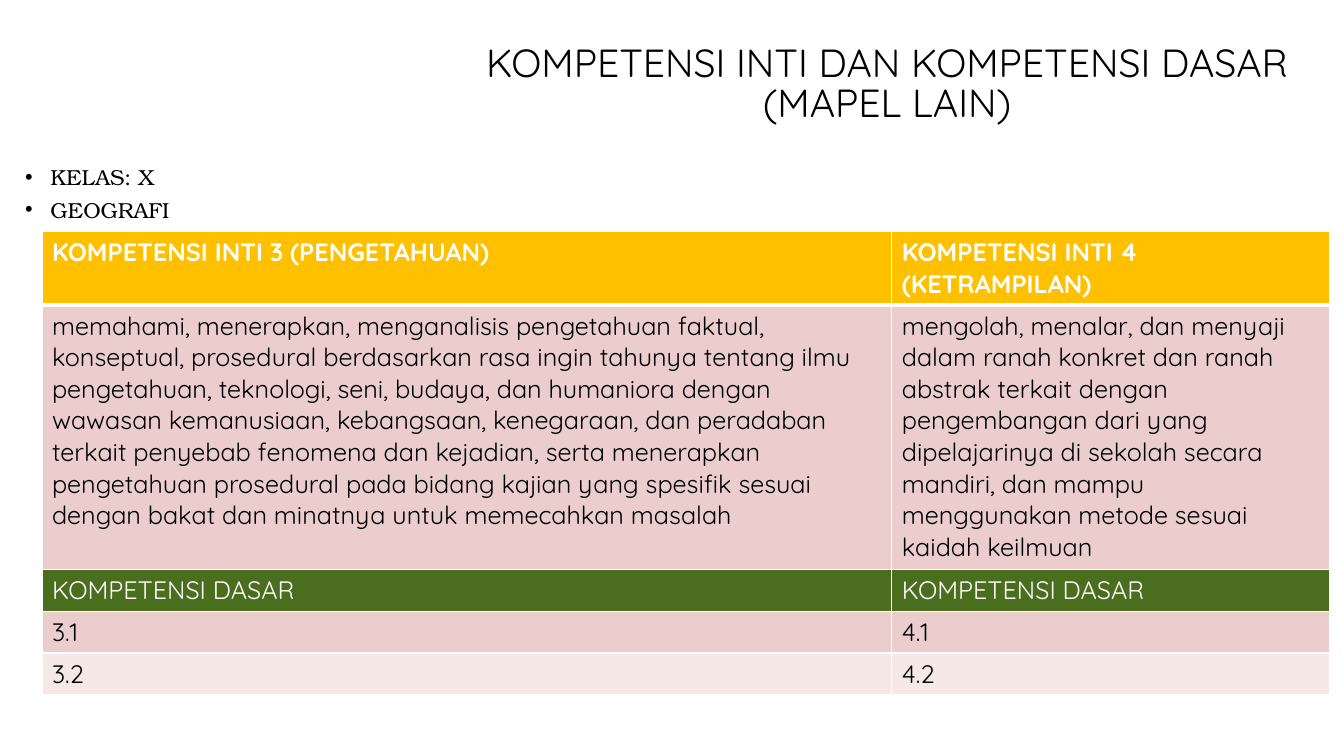
import pptx
import pptx.util
import pptx.dml.color
import pptx.enum.text
import pptx.oxml
import lxml.etree

Pt = pptx.util.Pt
Rgb = pptx.dml.color.RGBColor.from_string
Text = pptx.enum.text

THEME = {
    "sans": "Quicksand", "serif": "TeX Gyre Bonum",
    "title": 28, "list": 15.5, "cell": 18,
    "black": "000000", "white": "FFFFFF", "gold": "FFC000",
    "green": "4A6E1E", "rose": "EACDCC", "pale": "F5E8E7",
}


def style(para, face, size, color, **form):
    font = para.font
    values = {"name": THEME[face], "size": Pt(THEME[size]), **form}
    for key, value in values.items():
        setattr(font, key, value)
    font.color.rgb = Rgb(THEME[color])


def edge(cell, side, width):
    """Draw one white border of a cell, before its fill is set."""
    props = cell._tc.get_or_add_tcPr()
    line = lxml.etree.SubElement(
        props, pptx.oxml.ns.qn(f"a:ln{side}"), w=str(Pt(width)))
    fill = lxml.etree.SubElement(line, pptx.oxml.ns.qn("a:solidFill"))
    lxml.etree.SubElement(
        fill, pptx.oxml.ns.qn("a:srgbClr"), val=THEME["white"])


deck = pptx.Presentation()
deck.slide_width, deck.slide_height = Pt(960), Pt(540)
slide = deck.slides.add_slide(deck.slide_layouts[1])
title, body = slide.placeholders

places = [
    (title, (316.8, 29, 633.6, 64), Text.MSO_ANCHOR.MIDDLE),
    (body, (10.8, 118.8, 949, 65.5), Text.MSO_ANCHOR.TOP),
]
for shape, place, anchor in places:
    for key, value in zip(("left", "top", "width", "height"), place):
        setattr(shape, key, Pt(value))
    frame = shape.text_frame
    frame.auto_size = Text.MSO_AUTO_SIZE.NONE
    frame.word_wrap = True
    frame.vertical_anchor = anchor

# Title
title.text_frame.text = "KOMPETENSI INTI DAN KOMPETENSI DASAR (MAPEL LAIN)"
head = title.text_frame.paragraphs[0]
head.alignment = Text.PP_ALIGN.CENTER
head.line_spacing = 0.86
style(head, "sans", "title", "black")

# Class and subject
body.text_frame.text = "KELAS: X\nGEOGRAFI"
for i, para in enumerate(body.text_frame.paragraphs):
    para.line_spacing = 0.7
    para.space_before = Pt(10 if i else 0)
    props = para._p.get_or_add_pPr()
    props.set("marL", str(Pt(18)))
    props.set("indent", str(Pt(-18)))
    font = pptx.oxml.ns.qn("a:buFont")
    lxml.etree.SubElement(props, font, typeface="Arial")
    lxml.etree.SubElement(props, pptx.oxml.ns.qn("a:buChar"), char="•")
    style(para, "serif", "list", "black")

# Competence table: height, fill, text colour, texts
rows = [
    (51, "gold", "white",
     ("KOMPETENSI INTI 3 (PENGETAHUAN)",
      "KOMPETENSI INTI 4 (KETRAMPILAN)")),
    (189, "rose", "black",
     ("memahami, menerapkan, menganalisis pengetahuan faktual, "
      "konseptual, prosedural berdasarkan rasa ingin tahunya tentang ilmu "
      "pengetahuan, teknologi, seni, budaya, dan humaniora dengan "
      "wawasan kemanusiaan, kebangsaan, kenegaraan, dan peradaban "
      "terkait penyebab fenomena dan kejadian, serta menerapkan "
      "pengetahuan prosedural pada bidang kajian yang spesifik sesuai "
      "dengan bakat dan minatnya untuk memecahkan masalah",
      "mengolah, menalar, dan menyaji dalam ranah konkret dan ranah "
      "abstrak terkait dengan pengembangan dari yang dipelajarinya di "
      "sekolah secara mandiri, dan mampu menggunakan metode sesuai "
      "kaidah keilmuan")),
    (29.5, "green", "white", ("KOMPETENSI DASAR", "KOMPETENSI DASAR")),
    (29.5, "rose", "black", ("3.1", "4.1")),
    (29.5, "pale", "black", ("3.2", "4.2")),
]
cols = (607, 313)
high = sum(row[0] for row in rows)
table = slide.shapes.add_table(
    len(rows), len(cols), Pt(30), Pt(165.5), Pt(sum(cols)), Pt(high)).table
for col, width in zip(table.columns, cols):
    col.width = Pt(width)
for r, (height, fill, color, texts) in enumerate(rows):
    table.rows[r].height = Pt(height)
    for c, text in enumerate(texts):
        cell = table.cell(r, c)
        for side in "LRTB":
            thick = (r, side) in ((0, "B"), (1, "T"))
            edge(cell, side, 3 if thick else 1)
        cell.fill.solid()
        cell.fill.fore_color.rgb = Rgb(THEME[fill])
        cell.text = text
        style(cell.text_frame.paragraphs[0], "sans", "cell", color,
              bold=r == 0)

deck.save("out.pptx")
